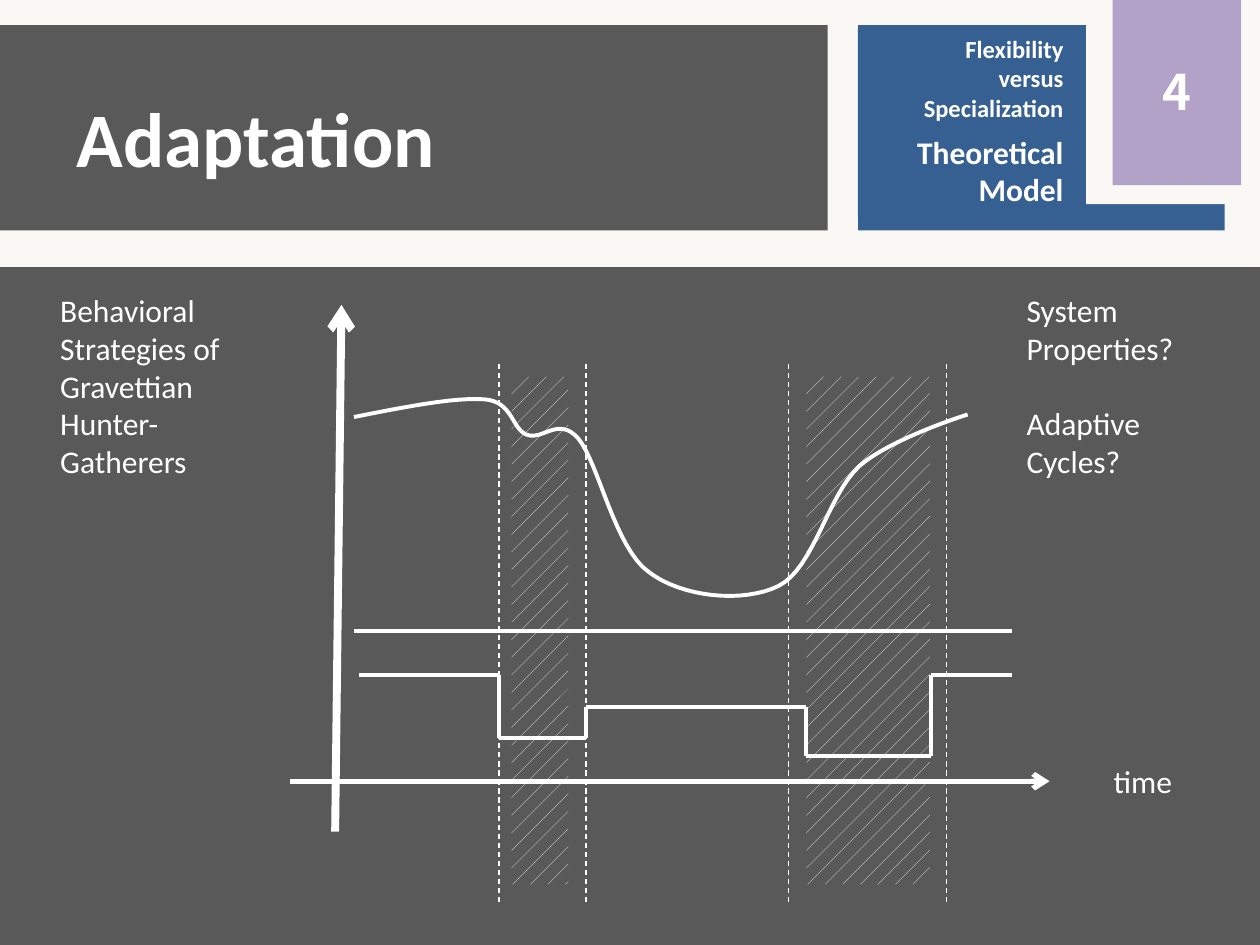
"""Build the Adaptation slide with its theoretical model diagram."""
from itertools import pairwise

from lxml import etree
from pptx import Presentation
from pptx.dml.color import RGBColor
from pptx.enum import dml, shapes, text
from pptx.oxml import ns
from pptx.util import Inches, Pt

COLORS = {"paper": "F9F8F5", "gray": "595959", "blue": "376092",
          "lilac": "B3A2C7", "white": "FFFFFF"}
FONT = "Calibri"
NUMBER_FONT = "Noto Sans CJK SC"

PANELS = [
    ("paper", (0, -0.03, 10, 7.53)),
    ("gray", (0, 0.2, 6.57, 1.63)),
    ("blue", (6.81, 0.2, 2.91, 1.63)),
    ("paper", (8.62, -0.03, 1.38, 1.65)),
    ("gray", (0, 2.12, 10, 5.38)),
]
TITLE = ("Adaptation", (0.51, 0.28, 8.5, 1.61))
NUMBER = ("4", (8.83, -0.03, 1.02, 1.5))
TOPIC_BOX = (6.81, 0.22, 1.73, 1.5)
TOPICS = [("Flexibility\nversus\nSpecialization", 14), ("Theoretical\nModel", 18)]
LABELS = [
    ((8.74, 6, 1.2, 0.4), ["time"], 0),
    ((0.38, 2.26, 1.73, 1.62),
     ["Behavioral Strategies of", "Gravettian Hunter-Gatherers"], 0),
    ((8.05, 2.26, 1.73, 1.62), ["System Properties?", "Adaptive Cycles?"], 21.5),
]
PHASE_LIMITS = [3.96, 4.65, 6.26, 7.51]
PHASE_TOP, PHASE_BOTTOM = 2.89, 7.16
TRANSITIONS = [(4.06, 0.45), (6.4, 0.98)]
VERTICAL_AXIS = ((2.66, 6.6), (2.71, 2.42))
TIME_AXIS = ((2.3, 6.2), (8.33, 6.2))
BASELINE = ((2.81, 5.01), (8.03, 5.01))
STEPS = [(2.85, 5.36), (3.96, 5.36), (3.96, 5.86), (4.65, 5.86), (4.65, 5.61),
         (6.4, 5.61), (6.4, 6), (7.39, 6), (7.39, 5.36), (8.03, 5.36)]
CURVE_START = (2.81, 3.31)
CURVE = [
    ((3.21, 3.23), (3.62, 3.15), (3.85, 3.17)),
    ((4.07, 3.19), (4.06, 3.4), (4.18, 3.45)),
    ((4.31, 3.5), (4.43, 3.3), (4.59, 3.48)),
    ((4.75, 3.67), (4.88, 4.35), (5.15, 4.54)),
    ((5.41, 4.74), (5.9, 4.79), (6.18, 4.65)),
    ((6.46, 4.51), (6.57, 3.93), (6.82, 3.7)),
    ((7.07, 3.48), (7.68, 3.29), (7.68, 3.29)),
]
CURVE_PIECES = 16


def color(name):
    return RGBColor.from_string(COLORS[name])


def lengths(values):
    return [Inches(value) for value in values]


def add_panel(page, fill, place):
    panel = page.shapes.add_shape(shapes.MSO_SHAPE.RECTANGLE, *lengths(place))
    panel.shadow.inherit = False
    panel.fill.solid()
    panel.fill.fore_color.rgb = color(fill)
    panel.line.fill.background()
    return panel


def write(para, words, size, bold=False, font=FONT):
    for index, line in enumerate(words.split("\n")):
        if index:
            para.add_line_break()
        span = para.add_run()
        span.text = line
        span.font.name = font
        span.font.size = Pt(size)
        span.font.bold = bold
        span.font.color.rgb = color("white")


def paragraphs(frame, count):
    return [frame.paragraphs[0]] + [frame.add_paragraph() for _ in range(count - 1)]


def add_line(page, start, end, width, dashed=False, arrow=False):
    line = page.shapes.add_connector(
        shapes.MSO_CONNECTOR.STRAIGHT, *lengths(start + end))
    line.line.color.rgb = color("white")
    line.line.width = Pt(width)
    if dashed:
        line.line.dash_style = dml.MSO_LINE.DASH
    if arrow:
        etree.SubElement(line.line._get_or_add_ln(), ns.qn("a:tailEnd"), type="arrow")
    etree.SubElement(line._element.spPr, ns.qn("a:effectLst"))


def curve_points():
    start = CURVE_START
    for first, second, end in CURVE:
        for piece in range(1, CURVE_PIECES + 1):
            t = piece / CURVE_PIECES
            weights = ((1 - t) ** 3, 3 * t * (1 - t) ** 2, 3 * t * t * (1 - t), t ** 3)
            yield tuple(sum(w * p[axis] for w, p in zip(weights, (start, first, second, end)))
                        for axis in (0, 1))
        start = end


def add_curve(page):
    builder = page.shapes.build_freeform(*lengths(CURVE_START))
    builder.add_line_segments([lengths(point) for point in curve_points()], close=False)
    curve = builder.convert_to_shape()
    curve.shadow.inherit = False
    curve.fill.background()
    curve.line.color.rgb = color("white")
    curve.line.width = Pt(2.25)


def add_header(page):
    words, place = TITLE
    title = page.shapes.title
    page.shapes._spTree.append(title._element)
    title.left, title.top, title.width, title.height = lengths(place)
    title.text_frame.vertical_anchor = text.MSO_ANCHOR.MIDDLE
    para = title.text_frame.paragraphs[0]
    para.alignment = text.PP_ALIGN.LEFT
    write(para, words, 44, bold=True)

    words, place = NUMBER
    frame = add_panel(page, "lilac", place).text_frame
    frame.vertical_anchor = text.MSO_ANCHOR.MIDDLE
    frame.paragraphs[0].alignment = text.PP_ALIGN.CENTER
    write(frame.paragraphs[0], words, 28, bold=True, font=NUMBER_FONT)

    frame = add_panel(page, "blue", TOPIC_BOX).text_frame
    frame.vertical_anchor = text.MSO_ANCHOR.TOP
    for para, (words, size) in zip(paragraphs(frame, len(TOPICS)), TOPICS):
        para.alignment = text.PP_ALIGN.RIGHT
        para.space_after = Pt(6)
        write(para, words, size, bold=True)


def add_diagram(page):
    add_line(page, *VERTICAL_AXIS, 4.5, arrow=True)
    for x in PHASE_LIMITS:
        add_line(page, (x, PHASE_TOP), (x, PHASE_BOTTOM), 0.75, dashed=True)
    for left, width in TRANSITIONS:
        fill = add_panel(page, "gray", (left, 2.99, width, 4.03)).fill
        fill.patterned()
        fill.pattern = dml.MSO_PATTERN.PERCENT_5
        fill.fore_color.rgb = color("white")
        fill.back_color.rgb = color("gray")
    add_line(page, *TIME_AXIS, 3, arrow=True)
    add_line(page, *BASELINE, 2.25)
    add_curve(page)
    for start, end in pairwise(STEPS):
        add_line(page, start, end, 2.25)


def add_labels(page):
    for place, lines, gap in LABELS:
        frame = page.shapes.add_textbox(*lengths(place)).text_frame
        frame.word_wrap = True
        for index, (para, words) in enumerate(zip(paragraphs(frame, len(lines)), lines)):
            if index:
                para.space_before = Pt(gap)
            write(para, words, 18)


def main():
    deck = Presentation()
    deck.slide_width, deck.slide_height = Inches(10), Inches(7.5)
    page = deck.slides.add_slide(deck.slide_layouts[5])
    for fill, place in PANELS:
        add_panel(page, fill, place)
    add_header(page)
    add_diagram(page)
    add_labels(page)
    deck.save("out.pptx")


if __name__ == "__main__":
    main()
